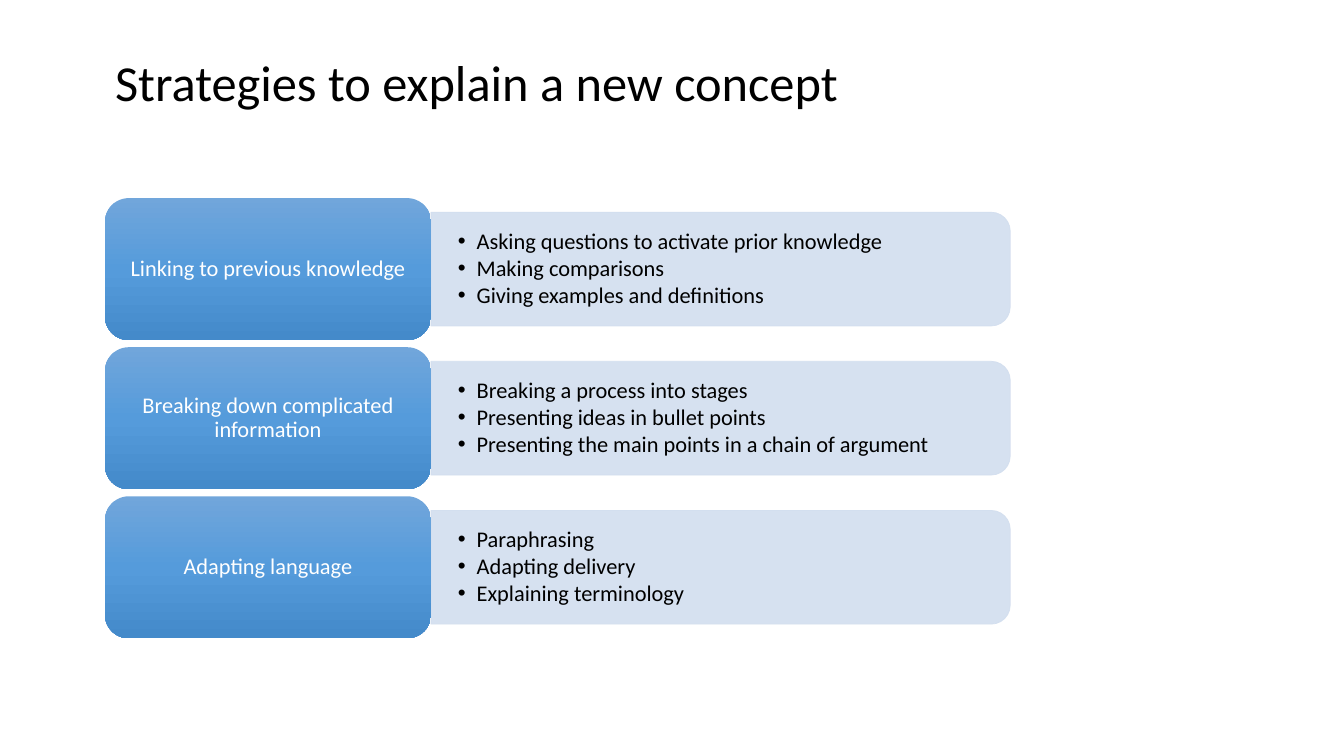
from copy import deepcopy

from lxml.etree import SubElement
from pptx import Presentation
from pptx.dml.color import RGBColor
from pptx.enum.shapes import MSO_SHAPE
from pptx.enum.text import MSO_ANCHOR, MSO_AUTO_SIZE, PP_ALIGN
from pptx.oxml.ns import qn
from pptx.util import Pt

BLACK = RGBColor(0x00, 0x00, 0x00)
WHITE = RGBColor(0xFF, 0xFF, 0xFF)
PANEL_BLUE = RGBColor(0xD2, 0xDE, 0xEF)
LABEL_BLUES = (
    RGBColor(0x71, 0xA6, 0xDB),
    RGBColor(0x55, 0x9B, 0xDB),
    RGBColor(0x44, 0x8A, 0xCA),
)

STRATEGIES = [
    ("Linking to previous knowledge", [
        "Asking questions to activate prior knowledge",
        "Making comparisons",
        "Giving examples and definitions",
    ]),
    ("Breaking down complicated information", [
        "Breaking a process into stages",
        "Presenting ideas in bullet points",
        "Presenting the main points in a chain of argument",
    ]),
    ("Adapting language", [
        "Paraphrasing",
        "Adapting delivery",
        "Explaining terminology",
    ]),
]

# Diagram measures in points
LEFT, TOP = 75, 141.5
LABEL_WIDTH, LABEL_HEIGHT = 232.8, 101.4
PANEL_WIDTH, PANEL_HEIGHT = 413.8, 81.2
ROW_STEP = 106.5


def write(frame, text, size=16, color=BLACK, align=PP_ALIGN.LEFT,
          anchor=MSO_ANCHOR.MIDDLE, margins=(7.2, 3.6), bullet=None, space_after=0):
    """Fill a text frame with one paragraph per line of text."""
    frame.word_wrap = True
    frame.auto_size = MSO_AUTO_SIZE.NONE
    frame.vertical_anchor = anchor
    frame.margin_left = frame.margin_right = Pt(margins[0])
    frame.margin_top = frame.margin_bottom = Pt(margins[1])
    for index, line in enumerate(text.split("\n")):
        paragraph = frame.add_paragraph() if index else frame.paragraphs[0]
        paragraph.alignment = align
        paragraph.line_spacing = 0.9
        paragraph.space_before = Pt(0)
        paragraph.space_after = Pt(space_after)
        if bullet:
            paragraph.level = 1
            properties = paragraph._p.get_or_add_pPr()
            properties.set("marL", str(Pt(13.5)))
            properties.set("indent", str(-Pt(13.5)))
            SubElement(properties, qn("a:buFont"), typeface="Arial")
            SubElement(properties, qn("a:buChar"), char=bullet)
        run = paragraph.add_run()
        run.text = line
        run.font.name = "Calibri"
        run.font.size = Pt(size)
        run.font.color.rgb = color


class StrategySlide:
    def __init__(self, presentation):
        self.slide = presentation.slides.add_slide(presentation.slide_layouts[5])
        self.shapes = self.slide.shapes

    def title(self, text):
        title = self.shapes.title
        title.left, title.top = Pt(75), Pt(28.8)
        title.width, title.height = Pt(765.4), Pt(55.4)
        write(title.text_frame, text, size=36, anchor=MSO_ANCHOR.BOTTOM)

    def panel(self, left, top):
        """Bar rounded at its right end: an upright shape turned a quarter."""
        shift = (PANEL_WIDTH - PANEL_HEIGHT) / 2
        panel = self.shapes.add_shape(
            MSO_SHAPE.ROUND_2_SAME_RECTANGLE, Pt(left + shift), Pt(top - shift),
            Pt(PANEL_HEIGHT), Pt(PANEL_WIDTH))
        panel.rotation = 90
        panel.shadow.inherit = False
        panel.fill.solid()
        panel.fill.fore_color.rgb = PANEL_BLUE
        panel.line.color.rgb = PANEL_BLUE
        panel.line.width = Pt(0.5)
        for color in panel._element.spPr.iter(qn("a:srgbClr")):
            SubElement(color, qn("a:alpha"), val="90000")

    def bullets(self, left, top, items):
        box = self.shapes.add_textbox(
            Pt(left), Pt(top + 4), Pt(PANEL_WIDTH - 4), Pt(PANEL_HEIGHT - 8))
        write(box.text_frame, "\n".join(items), margins=(19.2, 9.6),
              bullet="•", space_after=2.15)

    def label(self, left, top, text):
        label = self.shapes.add_shape(
            MSO_SHAPE.ROUNDED_RECTANGLE, Pt(left), Pt(top),
            Pt(LABEL_WIDTH), Pt(LABEL_HEIGHT))
        label.shadow.inherit = False
        label.line.fill.background()
        label.fill.gradient()
        label.fill.gradient_angle = 270
        stop_list = label._element.spPr.find(".//" + qn("a:gsLst"))
        stop_list.append(deepcopy(stop_list[0]))
        for index, stop in enumerate(label.fill.gradient_stops):
            stop.position = index / 2
            stop.color.rgb = LABEL_BLUES[index]
        write(label.text_frame, text, color=WHITE, align=PP_ALIGN.CENTER,
              margins=(5, 2.4))


def main():
    presentation = Presentation()
    presentation.slide_width, presentation.slide_height = Pt(960), Pt(540)
    page = StrategySlide(presentation)
    page.title("Strategies to explain a new concept")

    # One row per strategy: panel and bullets, then the label
    panel_left = LEFT + LABEL_WIDTH
    for row, (name, items) in enumerate(STRATEGIES):
        top = TOP + row * ROW_STEP
        panel_top = top + (LABEL_HEIGHT - PANEL_HEIGHT) / 2
        page.panel(panel_left, panel_top)
        page.bullets(panel_left, panel_top, items)
        page.label(LEFT, top, name)

    presentation.save("out.pptx")


if __name__ == "__main__":
    main()
